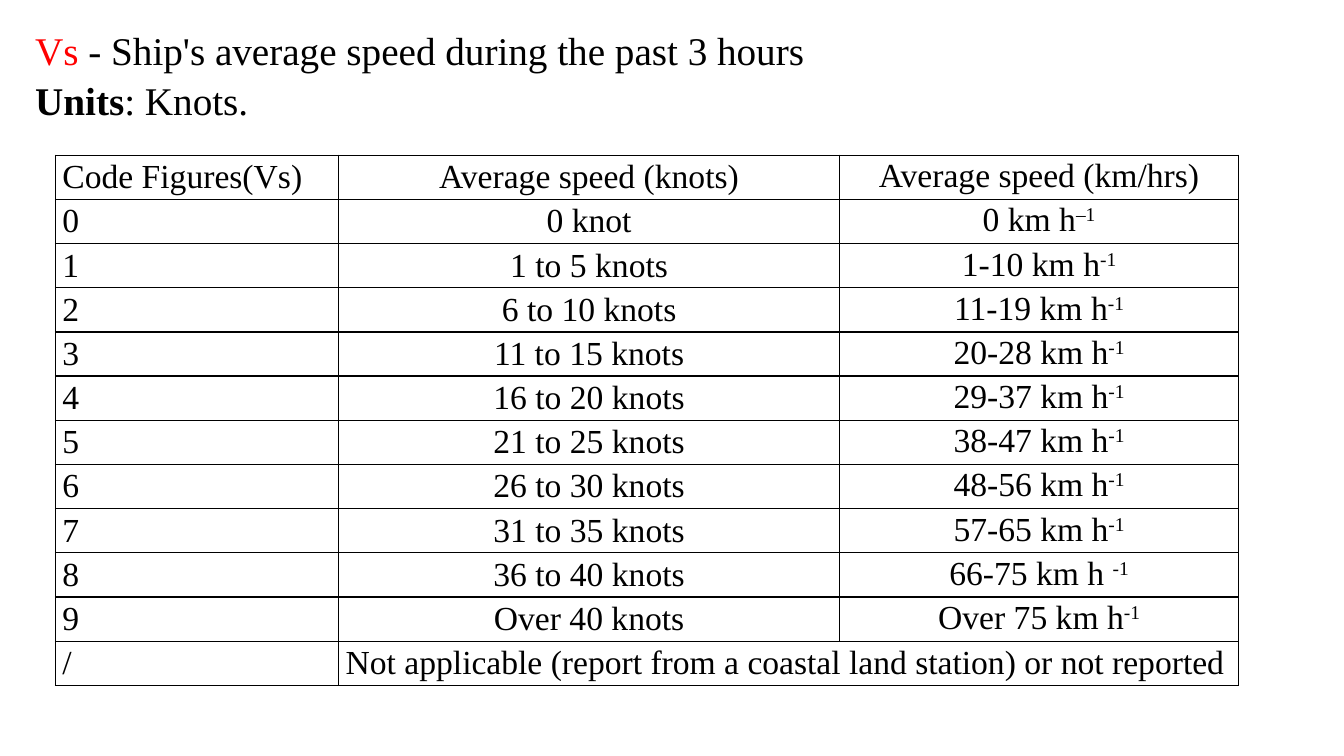
"""Build a slide with the ship speed code table."""
from lxml import etree
from pptx import Presentation
from pptx import util as u
from pptx.dml.color import RGBColor
from pptx.enum import text
from pptx.oxml.ns import qn

BLACK = RGBColor(0x00, 0x00, 0x00)
RED = RGBColor(0xFF, 0x00, 0x00)
FONT = "Times New Roman"
LEFT, CENTER = text.PP_ALIGN.LEFT, text.PP_ALIGN.CENTER


def add_run(p, words, size, color=BLACK, bold=False, raised=False):
    r = p.add_run()
    r.text = words
    for name, value in {"name": FONT, "size": u.Pt(size), "bold": bold}.items():
        setattr(r.font, name, value)
    r.font.color.rgb = color
    if raised:
        r.font._element.set("baseline", "30000")


def add_borders(cell):
    tcPr = cell._tc.get_or_add_tcPr()
    for side in ("a:lnL", "a:lnR", "a:lnT", "a:lnB"):
        ln = etree.SubElement(tcPr, qn(side), w=str(u.Pt(1)))
        fill = etree.SubElement(ln, qn("a:solidFill"))
        etree.SubElement(fill, qn("a:srgbClr"), val=str(BLACK))


prs = Presentation()
prs.slide_width, prs.slide_height = u.Pt(960), u.Pt(540)
s = prs.slides.add_slide(prs.slide_layouts[6])

sp = s.shapes.add_textbox(u.Pt(18), u.Pt(15.12), u.Pt(569.5), u.Pt(77.8))
tf = sp.text_frame
tf.word_wrap = True
tf.auto_size = text.MSO_AUTO_SIZE.SHAPE_TO_FIT_TEXT
p = tf.paragraphs[0]
add_run(p, "Vs", 28, RED)
add_run(p, " - Ship's average speed during the past 3 hours", 28)
p = tf.add_paragraph()
p.line_spacing, p.space_after = 1.07, u.Pt(8)
add_run(p, "Units", 28, bold=True)
add_run(p, ": Knots.", 28)

rows = [
    ("Code Figures(Vs)", "Average speed (knots)", "Average speed (km/hrs)", ""),
    ("0", "0 knot", "0 km h", "–1"),
    ("1", "1 to 5 knots", "1-10 km h", "-1"),
    ("2", "6 to 10 knots", "11-19 km h", "-1"),
    ("3", "11 to 15 knots", "20-28 km h", "-1"),
    ("4", "16 to 20 knots", "29-37 km h", "-1"),
    ("5", "21 to 25 knots", "38-47 km h", "-1"),
    ("6", "26 to 30 knots", "48-56 km h", "-1"),
    ("7", "31 to 35 knots", "57-65 km h", "-1"),
    ("8", "36 to 40 knots", "66-75 km h ", "-1"),
    ("9", "Over 40 knots", "Over 75 km h", "-1"),
    ("/", "Not applicable (report from a coastal land station) or not reported", "", ""),
]
widths = (202.3, 357.8, 285.1)
row_height = 31.56
last = len(rows) - 1

table = s.shapes.add_table(len(rows), len(widths), u.Pt(39.6), u.Pt(110.9),
                           u.Pt(sum(widths)), u.Pt(row_height * len(rows))).table
table.first_row = table.horz_banding = False
for column, width in zip(table.columns, widths):
    column.width = u.Pt(width)
for i, (*words, exponent) in enumerate(rows):
    table.rows[i].height = u.Pt(row_height)
    for j, content in enumerate(words):
        cell = table.cell(i, j)
        side, top = (0, 0) if j == 2 else (5.04, 0.72)
        margins = {"margin_left": side, "margin_right": side,
                   "margin_top": top, "margin_bottom": 0}
        for name, value in margins.items():
            setattr(cell, name, u.Pt(value))
        add_borders(cell)
        cell.fill.background()
        p = cell.text_frame.paragraphs[0]
        p.alignment = LEFT if j == 0 or i == last else CENTER
        p.line_spacing, p.space_after = 1.07, u.Pt(8)
        if content:
            add_run(p, content, 24)
        if j == 2 and exponent:
            add_run(p, exponent, 24, raised=True)
table.cell(last, 1).merge(table.cell(last, 2))

prs.save("out.pptx")
